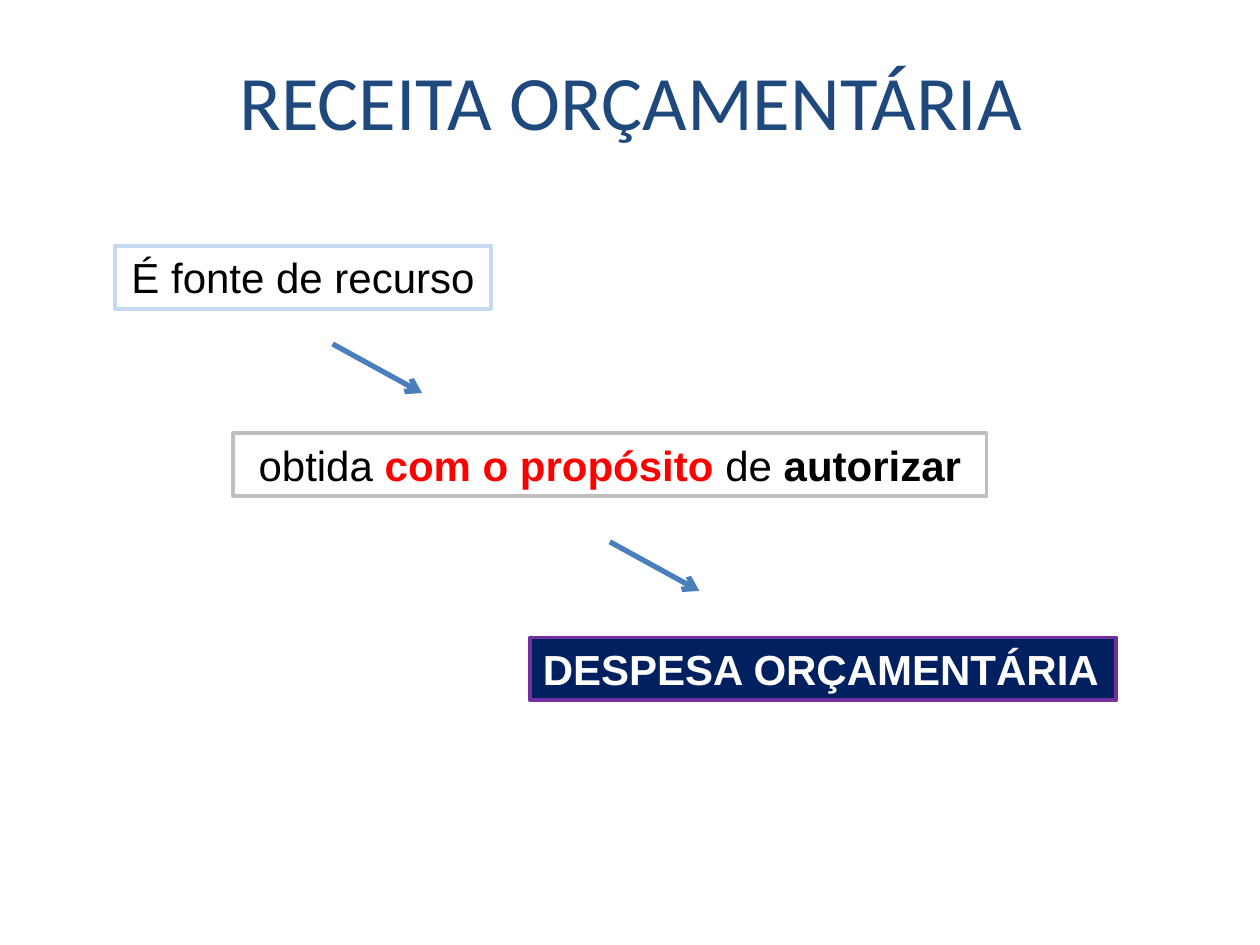
from pptx import Presentation
from pptx.dml.color import RGBColor
from pptx.enum.shapes import MSO_CONNECTOR, MSO_SHAPE
from pptx.enum.text import MSO_ANCHOR, MSO_AUTO_SIZE, PP_ALIGN
from pptx.oxml.ns import qn
from pptx.util import Inches, Pt
from lxml.etree import SubElement


def tint(code):
    return RGBColor.from_string(code)


class Deck:
    cols, rows = 100, 75
    head, body = "Calibri", "Arial"
    blue, black, red, white = "1F497D", "000000", "FF0000", "FFFFFF"
    arrow_ink = "4B7EBC"

    def __init__(self):
        self.prs = Presentation()
        self.prs.slide_width = Inches(10)
        self.prs.slide_height = Inches(7.5)
        self.slide = self.prs.slides.add_slide(self.prs.slide_layouts[6])

    def grid(self, *spots):
        units = (self.prs.slide_width / self.cols, self.prs.slide_height / self.rows)
        return [round(spot * units[i % 2]) for i, spot in enumerate(spots)]

    def label(self, shape, parts, font, size, align):
        para = shape.text_frame.paragraphs[0]
        para.alignment = align
        for text, ink, bold in parts:
            run = para.add_run()
            run.text = text
            run.font.name = font
            run.font.size = Pt(size)
            run.font.bold = bold
            run.font.color.rgb = tint(ink)

    def title(self, text, *area):
        box = self.slide.shapes.add_textbox(*self.grid(*area))
        box.text_frame.word_wrap = True
        box.text_frame.vertical_anchor = MSO_ANCHOR.MIDDLE
        self.label(box, [(text, self.blue, False)], self.head, 44, PP_ALIGN.CENTER)

    def box(self, parts, left, top, width, edge, fill=None, align=PP_ALIGN.CENTER):
        area = self.grid(left, top, width, 5)
        box = self.slide.shapes.add_shape(MSO_SHAPE.RECTANGLE, *area)
        box.shadow.inherit = False
        if fill:
            box.fill.solid()
            box.fill.fore_color.rgb = tint(fill)
        else:
            box.fill.background()
        box.line.color.rgb = tint(edge)
        box.line.width = Pt(2.25)
        frame = box.text_frame
        frame.word_wrap = True
        frame.auto_size = MSO_AUTO_SIZE.SHAPE_TO_FIT_TEXT
        frame.vertical_anchor = MSO_ANCHOR.TOP
        self.label(box, parts, self.body, 24, align)

    def arrow(self, left, top, wide=7.1, drop=3.9):
        ends = self.grid(left, top, left + wide, top + drop)
        line = self.slide.shapes.add_connector(MSO_CONNECTOR.STRAIGHT, *ends)
        line.line.color.rgb = tint(self.arrow_ink)
        line.line.width = Pt(3)
        props = line._element.spPr
        SubElement(props.find(qn("a:ln")), qn("a:tailEnd"), type="arrow")
        SubElement(props, qn("a:effectLst"))


def main():
    deck = Deck()
    deck.title("RECEITA ORÇAMENTÁRIA", 5.1, 2.8, 90, 10.2)
    deck.box([("É fonte de recurso", deck.black, False)], 9.1, 19.5, 29.9, "C6D9F1")
    aim = [
        ("obtida ", deck.black, False),
        ("com o propósito ", deck.red, True),
        ("de ", deck.black, False),
        ("autorizar", deck.black, True),
    ]
    deck.box(aim, 18.5, 34.4, 59.8, "BFBFBF")
    deck.box([("DESPESA ORÇAMENTÁRIA", deck.white, True)], 42.1, 50.6, 46.5,
             "7030A0", "002060", PP_ALIGN.LEFT)
    for left, top in ((26.4, 27.3), (48.4, 43)):
        deck.arrow(left, top)
    deck.prs.save("out.pptx")


if __name__ == "__main__":
    main()
